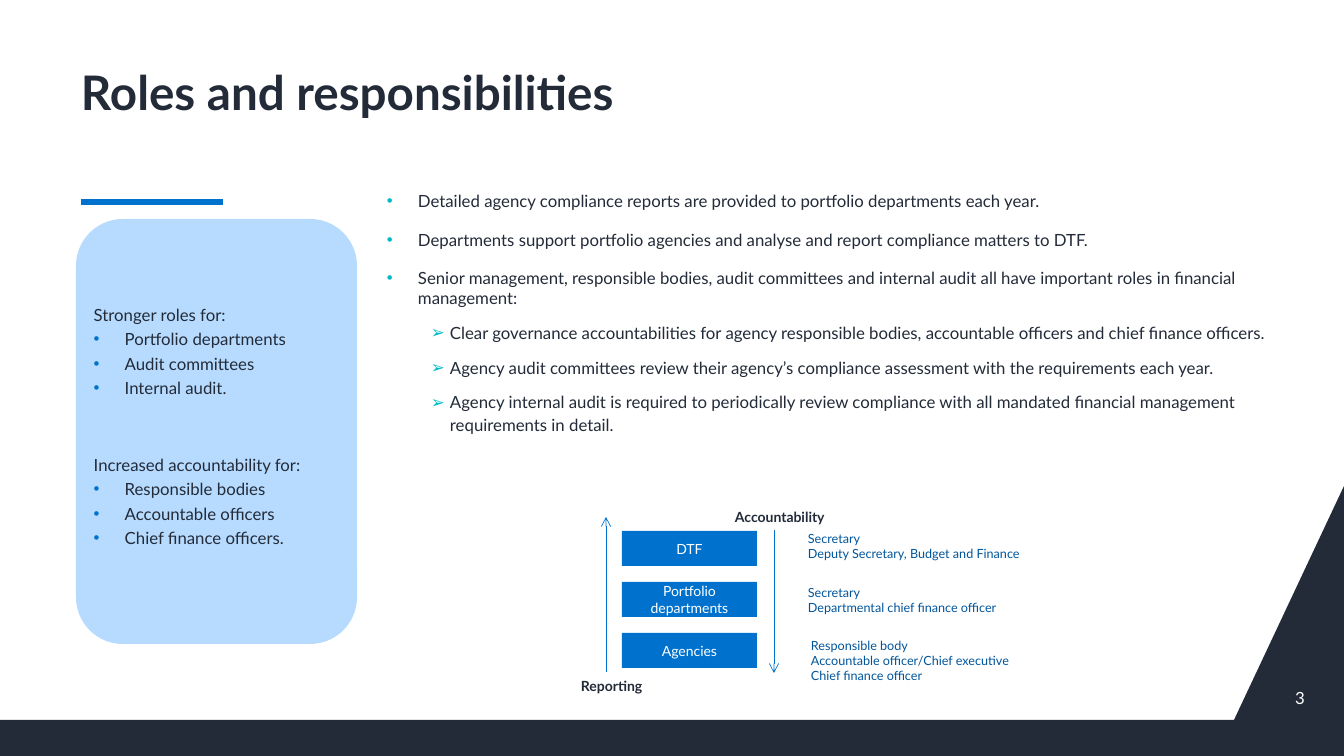
from dataclasses import dataclass

from lxml import etree
from pptx import Presentation
from pptx import util as u
from pptx.dml.color import RGBColor
from pptx.enum import shapes, text
from pptx.oxml.ns import qn

PX = 12192000 / 1344


def px(length):
    return round(length * PX)


@dataclass(frozen=True)
class Theme:
    font: str = "Lato"
    dark: str = "232B39"
    blue: str = "0072CE"
    deep_blue: str = "00559B"
    pale_blue: str = "B7DBFF"
    teal: str = "00BAC7"
    white: str = "FFFFFF"
    title: int = 34
    body: int = 12
    label: int = 10
    note: int = 9


THEME = Theme()


@dataclass(frozen=True)
class Box:
    x: int
    y: int
    w: int
    h: int

    def at(self, dx, dy, w, h):
        return Box(self.x + dx, self.y + dy, w, h)

    def emu(self):
        return [px(side) for side in (self.x, self.y, self.w, self.h)]


def set_frame(shape, insets=(10, 5, 10, 5), anchor=text.MSO_ANCHOR.TOP):
    frame = shape.text_frame
    frame.word_wrap = True
    frame.vertical_anchor = anchor
    (frame.margin_left, frame.margin_top,
     frame.margin_right, frame.margin_bottom) = map(px, insets)
    return frame


def write(frame, wording, size, color, bold=False, align=text.PP_ALIGN.LEFT):
    """Append one paragraph, filling the first one while it is still empty."""
    first = frame.paragraphs[0]
    paragraph = frame.add_paragraph() if first.runs else first
    paragraph.alignment = align
    run = paragraph.add_run()
    run.text = wording
    run.font.name = THEME.font
    run.font.size = u.Pt(size)
    run.font.bold = bold
    run.font.color.rgb = RGBColor.from_string(color)
    return paragraph


def space(paragraph, before, after, lines=1.0):
    paragraph.space_before = u.Pt(before)
    paragraph.space_after = u.Pt(after)
    paragraph.line_spacing = lines


def add_bullet(paragraph, char, color, indent, hang):
    props = paragraph._p.get_or_add_pPr()
    props.set("marL", str(px(indent)))
    props.set("indent", str(-px(hang)))
    bullet_color = etree.SubElement(props, qn("a:buClr"))
    etree.SubElement(bullet_color, qn("a:srgbClr"), val=color)
    etree.SubElement(props, qn("a:buFont"), typeface="Arial")
    etree.SubElement(props, qn("a:buChar"), char=char)


def add_block(slide, kind, box, color):
    block = slide.shapes.add_shape(kind, *box.emu())
    block.shadow.inherit = False
    block.fill.solid()
    block.fill.fore_color.rgb = RGBColor.from_string(color)
    block.line.fill.background()
    return block


def add_line(slide, start, end, width, arrow=False):
    line = slide.shapes.add_connector(
        shapes.MSO_CONNECTOR.STRAIGHT, *map(px, start + end))
    line.line.width = u.Pt(width)
    line.line.color.rgb = RGBColor.from_string(THEME.blue)
    if arrow:
        etree.SubElement(line.line._get_or_add_ln(), qn("a:tailEnd"), type="arrow")
    etree.SubElement(line._element.spPr, qn("a:effectLst"))


def add_label(slide, box, lines, size, color, bold=False):
    frame = set_frame(slide.shapes.add_textbox(*box.emu()))
    for line in lines:
        write(frame, line, size, color, bold)


def footer(slide, box, number):
    """Dark strip along the bottom that rises into a wedge at the right."""
    right, bottom = box.x + box.w, box.y + box.h
    strip_top = bottom - 36
    builder = slide.shapes.build_freeform(right - 110, strip_top, scale=PX)
    builder.add_line_segments([
        (box.x, strip_top), (box.x, bottom), (right, bottom), (right, box.y)])
    wedge = builder.convert_to_shape()
    wedge.shadow.inherit = False
    wedge.fill.solid()
    wedge.fill.fore_color.rgb = RGBColor.from_string(THEME.dark)
    wedge.line.fill.background()

    number_box = box.at(box.w - 77, box.h - 78, 48, 40)
    frame = set_frame(slide.shapes.add_textbox(*number_box.emu()),
                      anchor=text.MSO_ANCHOR.MIDDLE)
    write(frame, number, THEME.body, THEME.white, align=text.PP_ALIGN.RIGHT)


def heading(slide, box, wording):
    frame = set_frame(slide.shapes.add_textbox(*box.emu()), (4, 5, 4, 5),
                      text.MSO_ANCHOR.BOTTOM)
    write(frame, wording, THEME.title, THEME.dark, bold=True).line_spacing = 0.9
    rule_y = box.y + 165
    add_line(slide, (box.x + 4, rule_y), (box.x + 146, rule_y), 4.5)


def main_points(slide, box, points, subpoints):
    frame = set_frame(slide.shapes.add_textbox(*box.emu()), (4, 5, 4, 5))
    for point in points:
        paragraph = write(frame, point, THEME.body, THEME.dark)
        space(paragraph, 10, 3)
        add_bullet(paragraph, "•", THEME.teal, 31, 31)
    for subpoint in subpoints:
        paragraph = write(frame, subpoint, THEME.body, THEME.dark)
        paragraph.level = 1
        space(paragraph, 6, 3, 1.1)
        add_bullet(paragraph, "➢", THEME.teal, 63, 19)


def role_panel(slide, box, groups):
    panel = add_block(slide, shapes.MSO_SHAPE.ROUNDED_RECTANGLE, box,
                      THEME.pale_blue)
    frame = set_frame(panel, (4, 72, 4, 5))
    for index, (lead, roles) in enumerate(groups):
        space(write(frame, lead, THEME.body, THEME.dark), 37.5 * index, 3)
        for role in roles:
            paragraph = write(frame, role, THEME.body, THEME.dark)
            space(paragraph, 0, 3)
            add_bullet(paragraph, "•", THEME.blue, 31, 31)


def reporting_chain(slide, box, tiers):
    """Stacked tiers between an upward and a downward arrow, with officers."""
    for index, (tier, officers, indent) in enumerate(tiers):
        tier_box = box.at(51, 27 + 51 * index, 135, 35)
        block = add_block(slide, shapes.MSO_SHAPE.RECTANGLE, tier_box, THEME.blue)
        frame = set_frame(block, anchor=text.MSO_ANCHOR.MIDDLE)
        write(frame, tier, THEME.label, THEME.white, align=text.PP_ALIGN.CENTER)
        officer_box = box.at(indent, 22 + round(53.5 * index), 262,
                             10 + 15 * len(officers))
        add_label(slide, officer_box, officers, THEME.note, THEME.deep_blue)

    up_x, down_x = box.x + 35, box.x + 203
    add_line(slide, (up_x, box.y + 168), (up_x, box.y + 13), 0.5, arrow=True)
    add_line(slide, (down_x, box.y + 26), (down_x, box.y + 169), 0.5, arrow=True)
    for wording, dx, dy in (("Reporting", 0, 169), ("Accountability", 154, 0)):
        add_label(slide, box.at(dx, dy, 135, 27), [wording], THEME.label,
                  THEME.dark, bold=True)


def main():
    deck = Presentation()
    deck.slide_width, deck.slide_height = px(1344), px(756)
    slide = deck.slides.add_slide(deck.slide_layouts[6])

    footer(slide, Box(0, 486, 1344, 270), "3")
    heading(slide, Box(77, 37, 1159, 89), "Roles and responsibilities")
    main_points(slide, Box(383, 186, 941, 514), [
        "Detailed agency compliance reports are provided to portfolio departments each year.",
        "Departments support portfolio agencies and analyse and report compliance matters to DTF.",
        "Senior management, responsible bodies, audit committees and internal audit all have "
        "important roles in financial management:",
    ], [
        "Clear governance accountabilities for agency responsible bodies, accountable officers "
        "and chief finance officers.",
        "Agency audit committees review their agency’s compliance assessment with the "
        "requirements each year.",
        "Agency internal audit is required to periodically review compliance with all mandated "
        "financial management requirements in detail.",
    ])
    role_panel(slide, Box(76, 219, 281, 425), [
        ("Stronger roles for:",
         ["Portfolio departments", "Audit committees", "Internal audit."]),
        ("Increased accountability for:",
         ["Responsible bodies", "Accountable officers", "Chief finance officers."]),
    ])
    reporting_chain(slide, Box(571, 504, 492, 196), [
        ("DTF", ["Secretary", "Deputy Secretary, Budget and Finance"], 227),
        ("Portfolio departments", ["Secretary", "Departmental chief finance officer"], 227),
        ("Agencies", ["Responsible body", "Accountable officer/Chief executive",
                      "Chief finance officer"], 230),
    ])
    deck.save("out.pptx")


if __name__ == "__main__":
    main()
